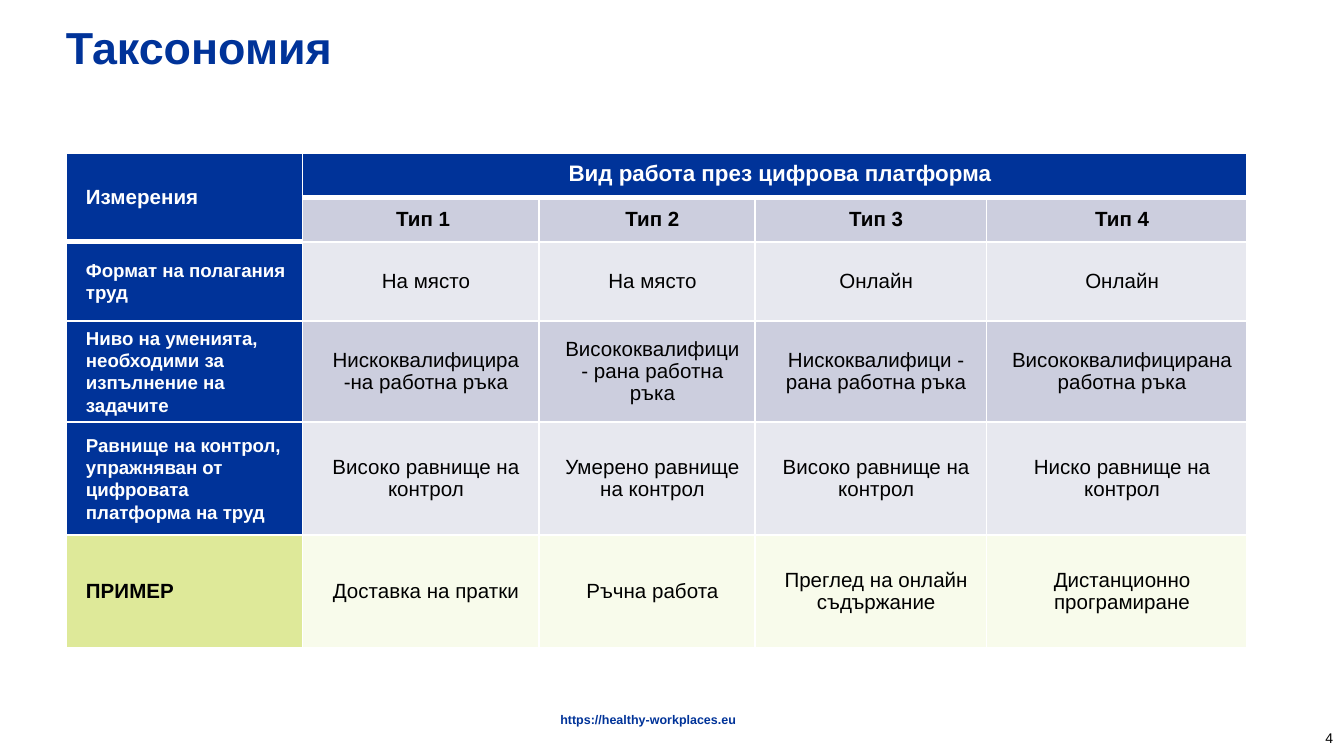
from lxml import etree
from pptx import Presentation
from pptx import util as u
from pptx.dml.color import RGBColor
from pptx.enum import text
from pptx.oxml.ns import qn

INK = {"navy": "003399", "white": "FFFFFF", "black": "000000",
       "mid": "CCCEDE", "pale": "E7E8EF", "lime": "DEE999", "cream": "F8FBEB"}
LEFT, MID, RIGHT = text.PP_ALIGN.LEFT, text.PP_ALIGN.CENTER, text.PP_ALIGN.RIGHT
COLS = [1.76, 1.76, 1.61, 1.72, 1.94]
ROWS = [0.33, 0.33, 0.59, 0.75, 0.84, 0.84]
CELLS = [
    ["Измерения", "Вид работа през цифрова платформа", "", "", ""],
    ["", "Тип 1 ", "Тип 2", "Тип 3", "Тип 4"],
    ["Формат на полагания труд", "На място", "На място", "Онлайн", "Онлайн"],
    ["Ниво на уменията, необходими за изпълнение на задачите",
     "Нискоквалифицира -на работна ръка", "Висококвалифици - рана работна ръка",
     "Нискоквалифици - рана работна ръка", "Висококвалифицирана работна ръка"],
    ["Равнище на контрол, упражняван от цифровата платформа на труд",
     "Високо равнище на контрол", "Умерено равнище на контрол",
     "Високо равнище на контрол", "Ниско равнище на контрол"],
    ["ПРИМЕР", "Доставка на пратки", "Ръчна работа",
     "Преглед на онлайн съдържание", "Дистанционно програмиране"],
]
HEADS = ["navy", "navy", "navy", "navy", "navy", "lime"]
FILLS = ["navy", "mid", "pale", "mid", "pale", "cream"]


def color(name):
    return RGBColor.from_string(INK[name])


def style(para, size, ink, bold, align):
    para.alignment = align
    for run in para.runs:
        run.font.name = "Arial"
        run.font.size = u.Pt(size)
        run.font.bold = bold
        run.font.color.rgb = color(ink)


def label(slide, words, box, pads, size, ink, bold, align, anchor):
    frame = slide.shapes.add_textbox(*map(u.Inches, box)).text_frame
    frame.word_wrap = True
    frame.vertical_anchor = anchor
    (frame.margin_left, frame.margin_top,
     frame.margin_right, frame.margin_bottom) = map(u.Inches, pads)
    frame.text = words
    style(frame.paragraphs[0], size, ink, bold, align)
    return frame.paragraphs[0]


def edge(cell, side, width):
    line = etree.SubElement(cell._tc.get_or_add_tcPr(), qn("a:ln" + side), w=str(u.Pt(width)))
    fill = etree.SubElement(line, qn("a:solidFill"))
    etree.SubElement(fill, qn("a:srgbClr"), val=INK["white"])


def rule(row, col):
    return 3 if row == (1 if col == 0 else 0) else 1


def look(row, col):
    if col == 0:
        size = 10 if 2 <= row <= 4 else 11
        return size, "black" if row == 5 else "white", True, LEFT
    if row == 0:
        return 12, "white", True, MID
    return 11, "black", row == 1, MID


def fill_cell(cell, row, col):
    cell.margin_left = cell.margin_right = u.Inches(0.07)
    cell.margin_top = cell.margin_bottom = 0
    cell.vertical_anchor = text.MSO_ANCHOR.MIDDLE
    edge(cell, "L", 1)
    edge(cell, "R", 1)
    edge(cell, "T", rule(row - 1, col))
    edge(cell, "B", rule(row, col))
    cell.fill.solid()
    cell.fill.fore_color.rgb = color((FILLS if col else HEADS)[row])
    if CELLS[row][col]:
        cell.text_frame.text = CELLS[row][col]
        para = cell.text_frame.paragraphs[0]
        para.line_spacing = u.Pt(12)
        para._p.get_or_add_pPr().set("marL", str(u.Inches(0.08)))
        style(para, *look(row, col))


def matrix(slide):
    box = map(u.Inches, (0.49, 1.14, sum(COLS), sum(ROWS)))
    table = slide.shapes.add_table(len(ROWS), len(COLS), *box).table
    for col, width in zip(table.columns, COLS):
        col.width = u.Inches(width)
    for row, height in zip(table.rows, ROWS):
        row.height = u.Inches(height)
    for row in range(len(ROWS)):
        for col in range(len(COLS)):
            fill_cell(table.cell(row, col), row, col)
    table.cell(0, 0).merge(table.cell(1, 0))
    table.cell(0, 1).merge(table.cell(0, 4))


def main():
    deck = Presentation()
    deck.slide_width, deck.slide_height = u.Inches(10), u.Inches(10 * 9 / 16)
    slide = deck.slides.add_slide(deck.slide_layouts[6])
    top, middle = text.MSO_ANCHOR.TOP, text.MSO_ANCHOR.MIDDLE
    label(slide, "4", (9.33, 5.34, 0.67, 0.3), (0.08, 0.04, 0.08, 0.04),
          7.5, "black", False, RIGHT, middle)
    link = label(slide, "https://healthy-workplaces.eu", (1.52, 5.31, 6.61, 0.09),
                 (0, 0, 0, 0), 6.7, "navy", True, MID, top)
    link.line_spacing = 0.9
    label(slide, "Таксономия", (0.49, 0.15, 8.27, 0.4), (0, 0.05, 0.1, 0.05),
          24, "navy", True, LEFT, middle)
    matrix(slide)
    deck.save("out.pptx")


if __name__ == "__main__":
    main()
